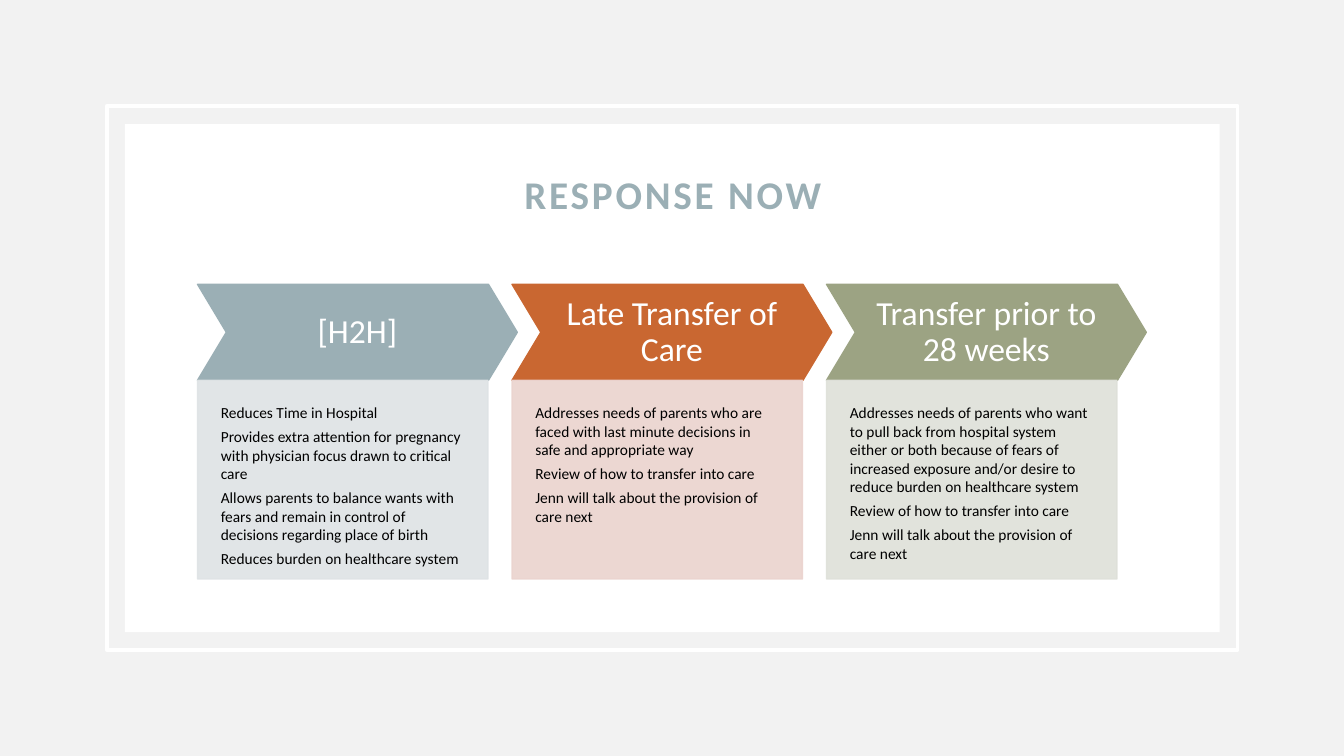
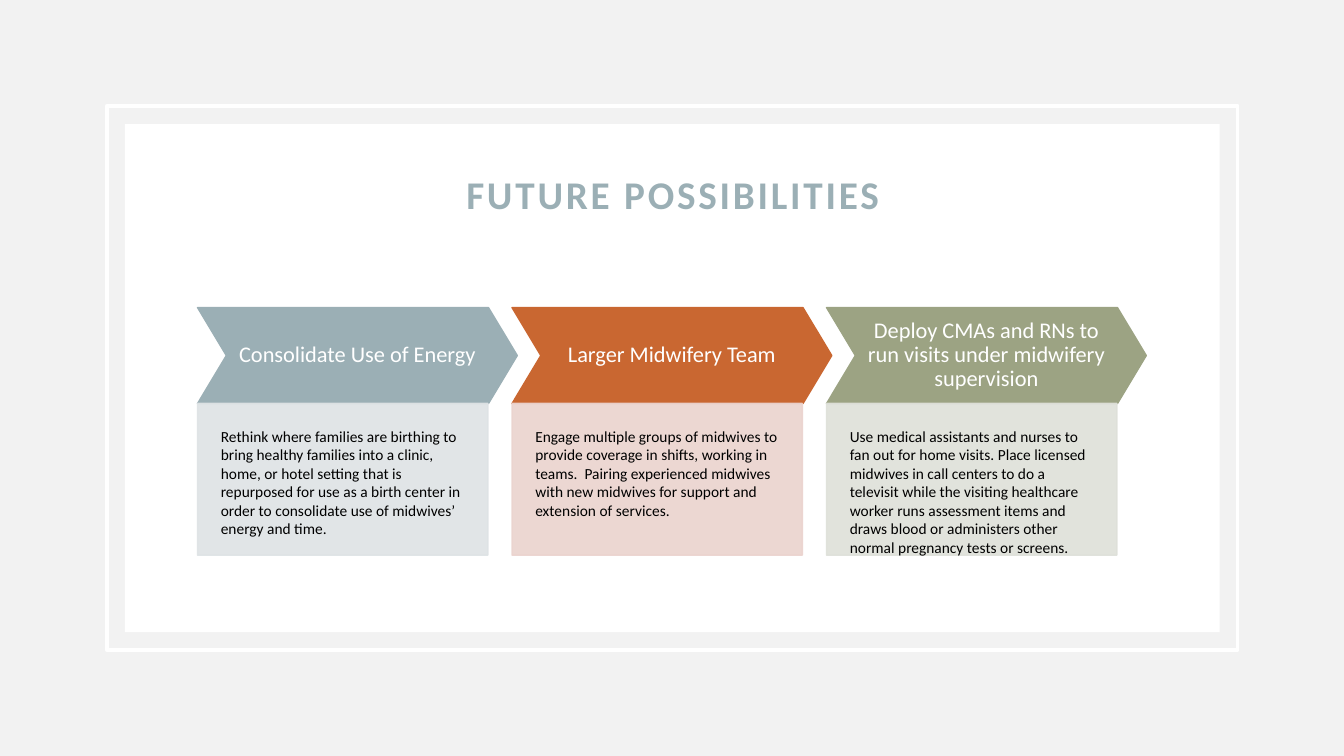
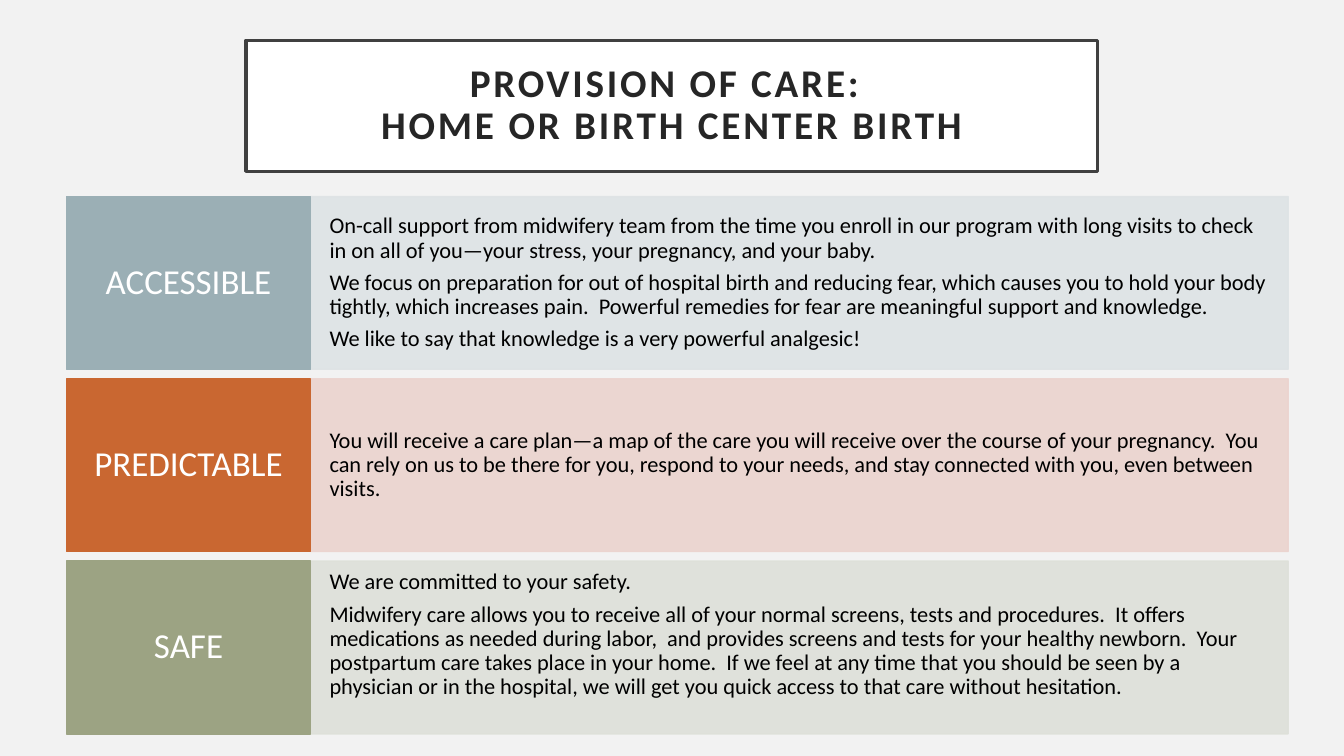
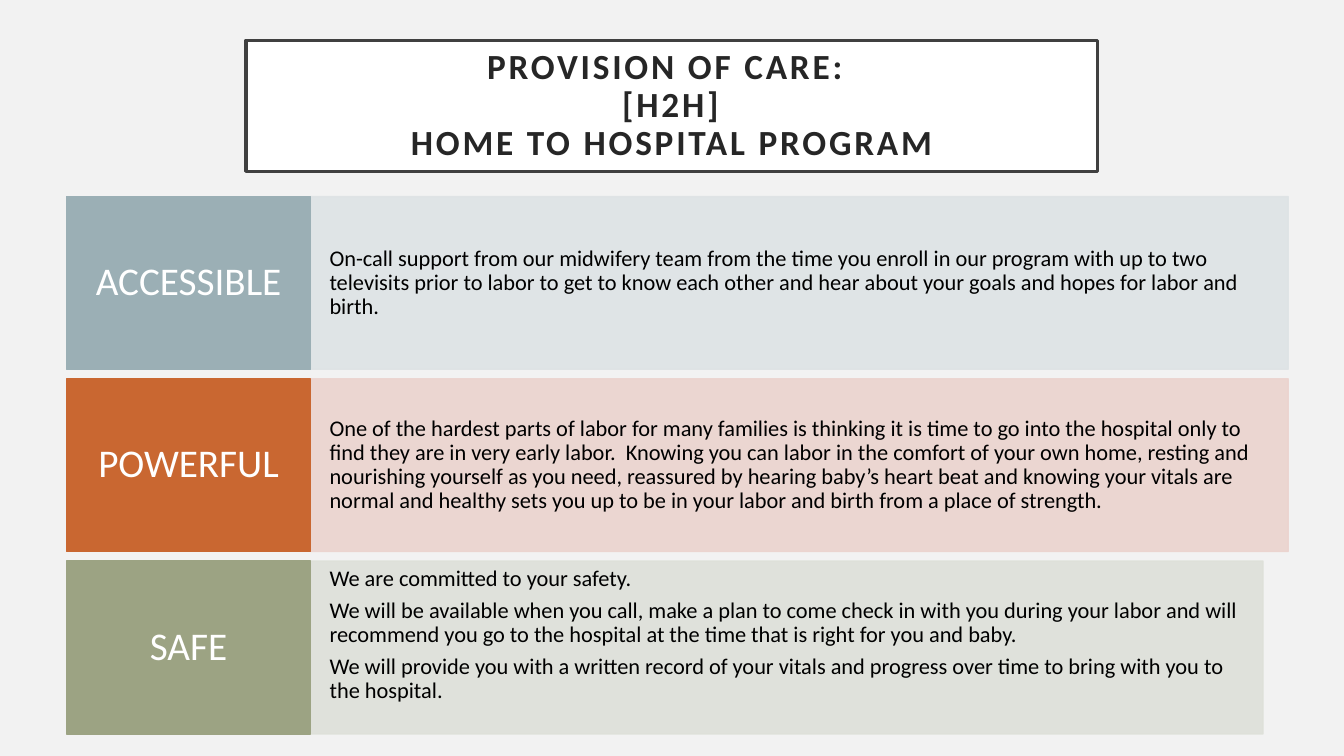
from lxml.etree import SubElement
from pptx import Presentation
from pptx.dml.color import RGBColor
from pptx.enum.shapes import MSO_SHAPE
from pptx.enum.text import MSO_ANCHOR, MSO_AUTO_SIZE, PP_ALIGN
from pptx.oxml.ns import qn
from pptx.util import Pt

FONT = "Calibri"
BLUE, ORANGE, GREEN = "9BAFB5", "C96731", "9CA383"
WHITE, BLACK, GREY = "FFFFFF", "000000", "F2F2F2"
THEMES = [(BLUE, "DEE3E5"), (ORANGE, "EBD3CE"), (GREEN, "DEE0D9")]


def paint(fill, color, opacity=100):
    fill.solid()
    fill.fore_color.rgb = RGBColor.from_string(color)
    if opacity < 100:
        srgb = fill._xPr.find(qn("a:solidFill"))[0]
        SubElement(srgb, qn("a:alpha"), val=str(opacity * 1000))


def add_block(slide, preset, box, color, paragraphs, size, text_color, align,
              anchor, margins, spacing, opacity=100):
    """Add a filled shape with text; margins are left, top, right, bottom."""
    block = slide.shapes.add_shape(preset, *map(Pt, box))
    block.shadow.inherit = False
    paint(block.fill, color, opacity)
    paint(block.line.fill, color, opacity)
    block.line.width = Pt(1)
    frame = block.text_frame
    frame.word_wrap = True
    frame.vertical_anchor = anchor
    (frame.margin_left, frame.margin_top,
     frame.margin_right, frame.margin_bottom) = map(Pt, margins)
    frame.text = "\n".join(paragraphs)
    for paragraph in frame.paragraphs:
        paragraph.alignment = align
        paragraph.line_spacing = spacing
        paragraph.space_after = Pt(round(size * 0.35, 2))
        paragraph.font.name = FONT
        paragraph.font.size = Pt(size)
        paint(paragraph.font.fill, text_color)
    return block


prs = Presentation()
prs.slide_width, prs.slide_height = Pt(960), Pt(540)
paint(prs.slide_master.background.fill, GREY)
title_style = prs.slide_master.element.find(".//" + qn("p:titleStyle"))
title_style.find(".//" + qn("a:defRPr")).set("spc", "200")
title_only = prs.slide_layouts[5]

# Chevron slides: title, title size, chevron top, heading size, body height, columns
flows = [
    ("RESPONSE NOW", 203.1, 24, 142, [
        ("[H2H]", [
            "Reduces Time in Hospital",
            "Provides extra attention for pregnancy with physician focus drawn to critical care",
            "Allows parents to balance wants with fears and remain in control of decisions "
            "regarding place of birth",
            "Reduces burden on healthcare system"]),
        ("Late Transfer of Care", [
            "Addresses needs of parents who are faced with last minute decisions in safe and "
            "appropriate way",
            "Review of how to transfer into care",
            "Jenn will talk about the provision of care next"]),
        ("Transfer prior to 28 weeks", [
            "Addresses needs of parents who want to pull back from hospital system either or "
            "both because of fears of increased exposure and/or desire to reduce burden on "
            "healthcare system",
            "Review of how to transfer into care",
            "Jenn will talk about the provision of care next"]),
    ]),
    ("FUTURE POSSIBILITIES", 219.7, 16, 108.4, [
        ("Consolidate Use of Energy", [
            "Rethink where families are birthing to bring healthy families into a clinic, home, "
            "or hotel setting that is repurposed for use as a birth center in order to "
            "consolidate use of midwives’ energy and time."]),
        ("Larger Midwifery Team", [
            "Engage multiple groups of midwives to provide coverage in shifts, working in "
            "teams.  Pairing experienced midwives with new midwives for support and extension "
            "of services."]),
        ("Deploy CMAs and RNs to run visits under midwifery supervision", [
            "Use medical assistants and nurses to fan out for home visits. Place licensed "
            "midwives in call centers to do a televisit while the visiting healthcare worker "
            "runs assessment items and draws blood or administers other normal pregnancy tests "
            "or screens."]),
    ]),
]

# Row slides: title, title size, label size, rows of
# (label, text width, extra bottom margin, paragraphs)
provisions = [
    ("PROVISION OF CARE: \vHOME OR BIRTH CENTER BIRTH", 28, 25, [
        ("ACCESSIBLE", 698.4, 0, [
            "On-call support from midwifery team from the time you enroll in our program with "
            "long visits to check in on all of you—your stress, your pregnancy, and your baby.",
            "We focus on preparation for out of hospital birth and reducing fear, which causes "
            "you to hold your body tightly, which increases pain.  Powerful remedies for fear "
            "are meaningful support and knowledge.",
            "We like to say that knowledge is a very powerful analgesic!"]),
        ("PREDICTABLE", 698.4, 0, [
            "You will receive a care plan—a map of the care you will receive over the course of "
            "your pregnancy.  You can rely on us to be there for you, respond to your needs, "
            "and stay connected with you, even between visits."]),
        ("SAFE", 698.4, 17.8, [
            "We are committed to your safety.",
            "Midwifery care allows you to receive all of your normal screens, tests and "
            "procedures.  It offers medications as needed during labor,  and provides screens "
            "and tests for your healthy newborn.  Your postpartum care takes place in your "
            "home.  If we feel at any time that you should be seen by a physician or in the "
            "hospital, we will get you quick access to that care without hesitation."]),
    ]),
    ("PROVISION OF CARE: \v[H2H]\vHOME TO HOSPITAL PROGRAM", 25.2, 28, [
        ("ACCESSIBLE", 698.4, 0, [
            "On-call support from our midwifery team from the time you enroll in our program "
            "with up to two televisits prior to labor to get to know each other and hear about "
            "your goals and hopes for labor and birth."]),
        ("POWERFUL", 698.4, 0, [
            "One of the hardest parts of labor for many families is thinking it is time to go "
            "into the hospital only to find they are in very early labor.  Knowing you can "
            "labor in the comfort of your own home, resting and nourishing yourself as you "
            "need, reassured by hearing baby’s heart beat and knowing your vitals are normal "
            "and healthy sets you up to be in your labor and birth from a place of strength."]),
        ("SAFE", 680.4, 17.8, [
            "We are committed to your safety.",
            "We will be available when you call, make a plan to come check in with you during "
            "your labor and will recommend you go to the hospital at the time that is right "
            "for you and baby.",
            "We will provide you with a written record of your vitals and progress over time "
            "to bring with you to the hospital."]),
    ]),
]

for heading, top, heading_size, body_height, columns in flows:
    slide = prs.slides.add_slide(title_only)
    title = slide.shapes.title
    title.text = heading
    title.left, title.top, title.width, title.height = map(Pt, (141.1, 104.4, 679, 72.7))

    panel = slide.shapes.add_shape(MSO_SHAPE.RECTANGLE, *map(Pt, (89.3, 88.6, 781.9, 362.9)))
    panel.shadow.inherit = False
    paint(panel.fill, WHITE)
    panel.line.fill.background()
    slide.shapes._spTree.insert(2, panel._element)  # behind the title

    border = slide.shapes.add_shape(MSO_SHAPE.RECTANGLE, *map(Pt, (76.3, 75.6, 807.8, 388.8)))
    border.shadow.inherit = False
    border.fill.background()
    paint(border.line.fill, WHITE)
    border.line.width = Pt(2.5)

    for column, ((label, points), (strong, pale)) in enumerate(zip(columns, THEMES)):
        left = 141.1 + column * 224.65
        chevron = add_block(slide, MSO_SHAPE.CHEVRON, (left, top, 228.4, 68.5), strong,
                            [label], heading_size, WHITE, PP_ALIGN.CENTER,
                            MSO_ANCHOR.MIDDLE, [8.6] * 4, 0.9)
        chevron.adjustments[0] = 0.3
        add_block(slide, MSO_SHAPE.RECTANGLE, (left, top + 68.5, 207.4, body_height), pale,
                  points, 11, BLACK, PP_ALIGN.LEFT, MSO_ANCHOR.TOP,
                  (16.6, 16.6, 16.6, 33.1), 1.0, opacity=90)

for heading, title_size, label_size, rows in provisions:
    slide = prs.slides.add_slide(title_only)
    title = slide.shapes.title
    title.text = heading
    title.left, title.top, title.width, title.height = map(Pt, (175.7, 28.8, 608.4, 93.6))
    paint(title.fill, WHITE)
    paint(title.line.fill, "404040")
    title.line.width = Pt(2.5)
    title.text_frame.paragraphs[0].font.size = Pt(title_size)

    for row, ((label, width, extra, points), (strong, pale)) in enumerate(zip(rows, THEMES)):
        top = 140.4 + row * 130.2
        add_block(slide, MSO_SHAPE.RECTANGLE, (221.8, top, width, 123.4), pale, points, 16,
                  BLACK, PP_ALIGN.LEFT, MSO_ANCHOR.MIDDLE,
                  (13.6, 31, 13.6, 31 + extra), 0.9, opacity=90)
        add_block(slide, MSO_SHAPE.RECTANGLE, (47.5, top, 174.3, 123.4), strong, [label],
                  label_size, WHITE, PP_ALIGN.CENTER, MSO_ANCHOR.MIDDLE,
                  (9.4, 12.2, 9.4, 12.2), 0.9)

for slide, color, size in zip(prs.slides, (BLUE, BLUE, "262626", "262626"),
                              (28, 28, *(provision[1] for provision in provisions))):
    frame = slide.shapes.title.text_frame
    frame.auto_size = MSO_AUTO_SIZE.NONE
    frame.word_wrap = True
    frame.vertical_anchor = MSO_ANCHOR.MIDDLE
    frame.margin_left = frame.margin_top = frame.margin_right = frame.margin_bottom = Pt(14.4)
    paragraph = frame.paragraphs[0]
    paragraph.alignment = PP_ALIGN.CENTER
    paragraph.line_spacing = 0.9
    paragraph.font.name = FONT
    paragraph.font.size = Pt(size)
    paragraph.font.bold = True
    paint(paragraph.font.fill, color)

prs.save("out.pptx")
